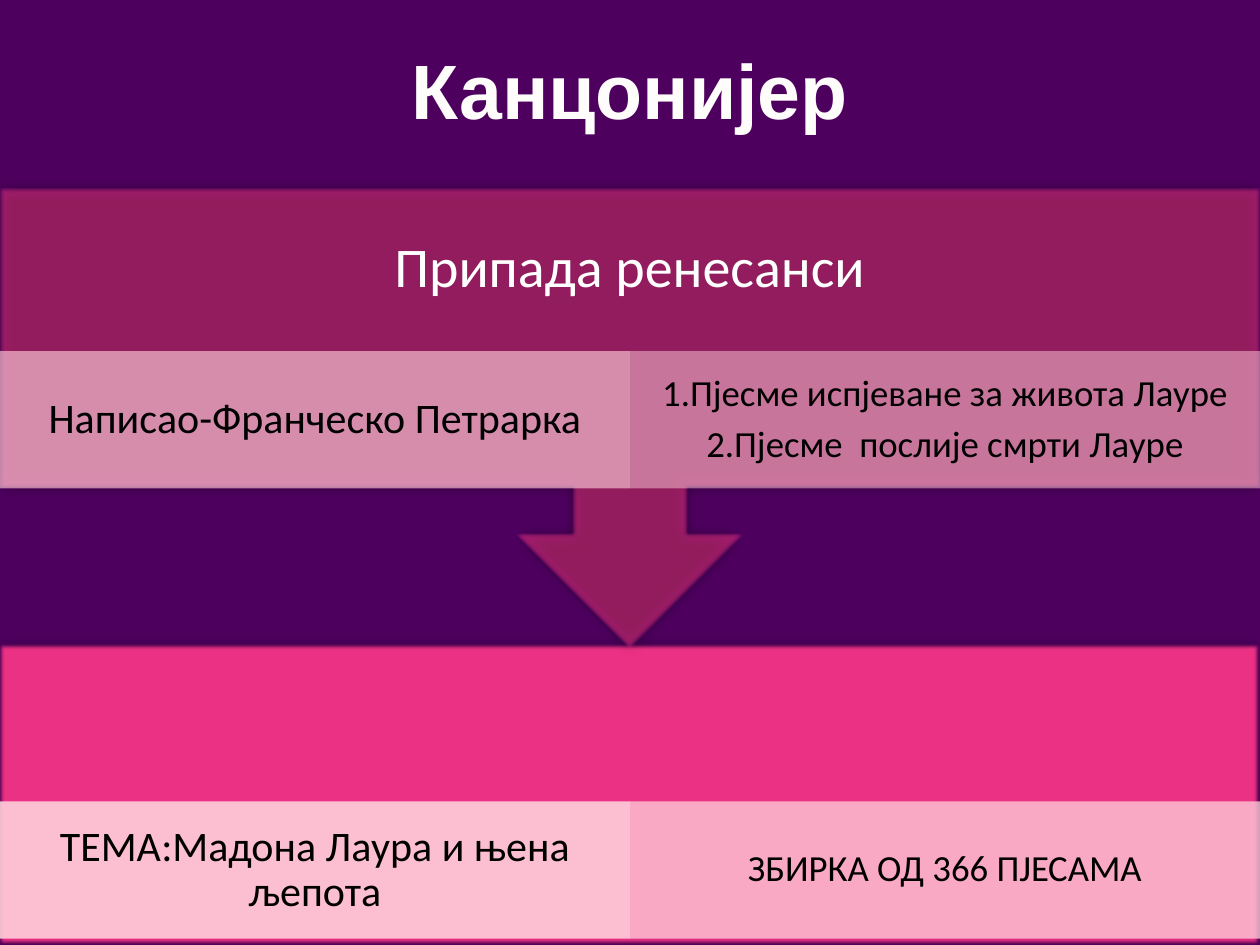
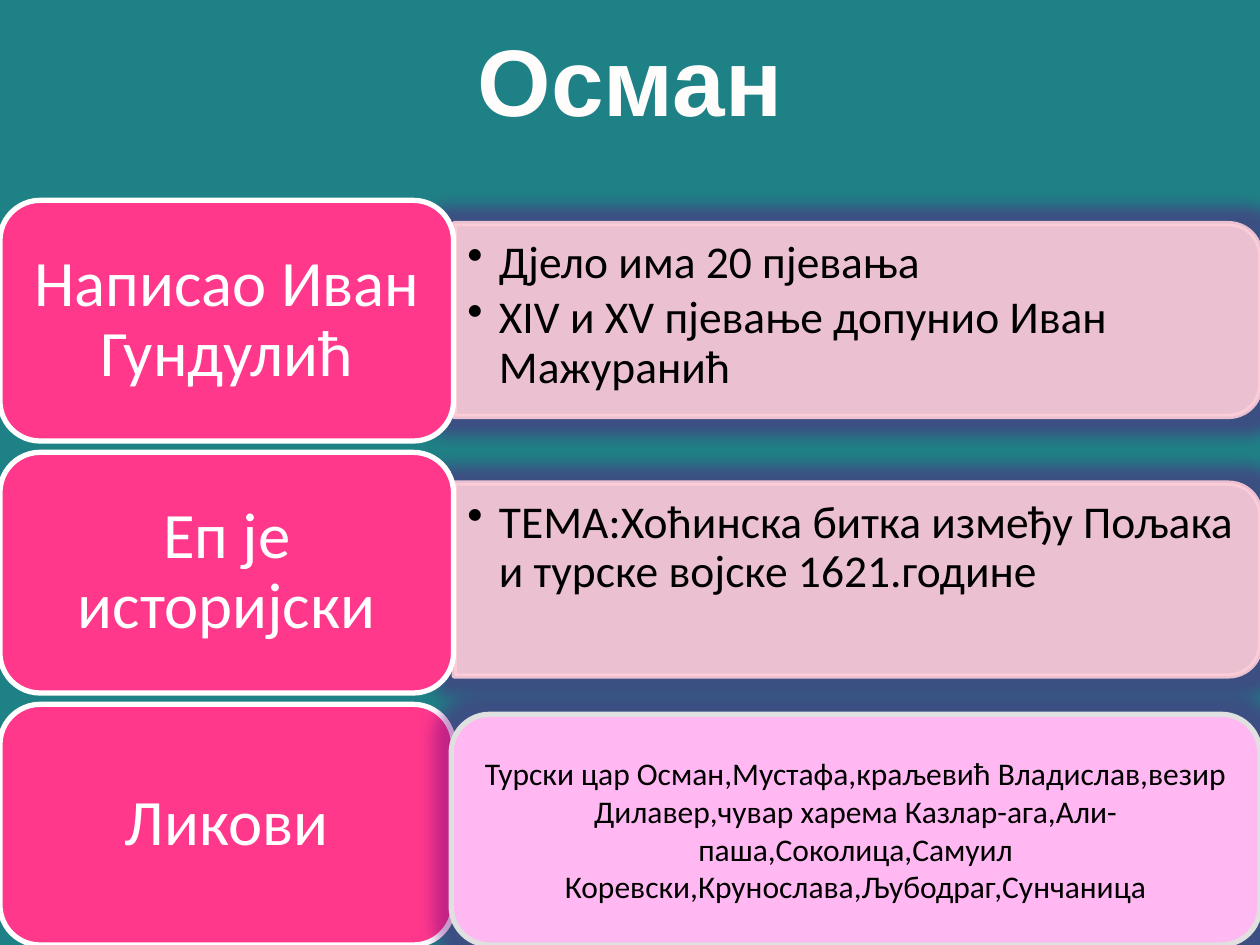
import pptx
import pptx.util
import pptx.dml.color
import pptx.enum.shapes
import pptx.enum.text
import pptx.oxml
import pptx.oxml.ns

Pt = pptx.util.Pt
Shape = pptx.enum.shapes.MSO_SHAPE
Align = pptx.enum.text.PP_ALIGN
Anchor = pptx.enum.text.MSO_ANCHOR
qn = pptx.oxml.ns.qn
NS = 'xmlns:a="http://schemas.openxmlformats.org/drawingml/2006/main"'

PINK, BLUSH, WHITE, BLACK, TITLE = "FF388C", "FFCEDA", "FFFFFF", "000000", "FFFCFC"
SOFT_SHADOW = (
    f'<a:effectLst {NS}><a:outerShdw blurRad="95250" dist="0" algn="ctr" rotWithShape="0">'
    f'<a:srgbClr val="{BLACK}"><a:alpha val="50000"/></a:srgbClr></a:outerShdw>'
    '<a:softEdge rad="12700"/></a:effectLst>')
PURPLE_GLOW = (
    f'<a:effectLst {NS}><a:glow rad="228600"><a:srgbClr val="69047E">'
    '<a:alpha val="40000"/></a:srgbClr></a:glow></a:effectLst>')
TITLE_OUTLINE = (
    f'<a:ln {NS} w="889"><a:solidFill><a:srgbClr val="{PINK}">'
    '<a:alpha val="55000"/></a:srgbClr></a:solidFill></a:ln>')
BULLET = f'<a:buChar {NS} char="•"/>'


def paint(fill, color, element=None, opacity=100):
    fill.solid()
    fill.fore_color.rgb = pptx.dml.color.RGBColor.from_string(color)
    if opacity < 100:
        rgb = element.find(qn("a:solidFill") + "/" + qn("a:srgbClr"))
        alpha = rgb.makeelement(qn("a:alpha"), {"val": str(opacity * 1000)})
        rgb.append(alpha)


def put(slide, text, box, kind=None, fill=None, opacity=100, line=None, effect=None,
        rotation=0, size=24, color=BLACK, font="Calibri", bold=False, outline=None,
        align=Align.CENTER, anchor=Anchor.MIDDLE, inset=(7.2, 3.6),
        spacing=0.9, after=0.31, bullet=False):
    place = [Pt(value) for value in box]
    if kind is None:
        item = slide.shapes.add_textbox(*place)
    else:
        item = slide.shapes.add_shape(kind, *place)
        item.rotation = rotation
        item.shadow.inherit = False
        properties = item.element.spPr
        paint(item.fill, fill, properties, opacity)
        if line:
            item.line.width = Pt(3)
            paint(item.line.fill, line, properties.find(qn("a:ln")), opacity)
        else:
            item.line.fill.background()
        if effect:
            properties.replace(properties.find(qn("a:effectLst")),
                               pptx.oxml.parse_xml(effect))
    if not text:
        return
    frame = item.text_frame
    frame.word_wrap = True
    frame.vertical_anchor = anchor
    frame.margin_left = frame.margin_right = Pt(inset[0])
    frame.margin_top = frame.margin_bottom = Pt(inset[1])
    for index, words in enumerate(text.split("\n")):
        paragraph = frame.add_paragraph() if index else frame.paragraphs[0]
        paragraph.alignment = align
        paragraph.line_spacing = spacing
        paragraph.space_after = Pt(round(size * after, 1))
        if bullet:
            settings = paragraph._p.get_or_add_pPr()
            settings.set("marL", str(Pt(18)))
            settings.set("indent", str(-Pt(18)))
            settings.append(pptx.oxml.parse_xml(BULLET))
        run = paragraph.add_run()
        run.text = words
        run.font.size = Pt(size)
        run.font.name = font
        run.font.bold = bold
        paint(run.font.fill, color)
        if outline:
            run._r.get_or_add_rPr().insert(0, pptx.oxml.parse_xml(outline))


deck = pptx.Presentation()
deck.slide_width, deck.slide_height = Pt(720), Pt(540)
slides = []
for heading, background, top, size in [
    ("Канцонијер", "4E005F", 18, 44),
    ("Осман", "1E8186", 12, 54),
]:
    slide = deck.slides.add_slide(deck.slide_layouts[6])
    paint(slide.background.fill, background)
    put(slide, heading, (36, top, 648, 66), size=size, color=TITLE, font="Arial",
        bold=True, outline=TITLE_OUTLINE, spacing=1, after=0)
    slides.append(slide)
canzoniere, osman = slides

put(canzoniere, "", (0, 368.6, 720, 171.4), kind=Shape.RECTANGLE, fill=PINK,
    opacity=90, effect=SOFT_SHADOW)
put(canzoniere, "", (0, 108, 720, 262.8), kind=Shape.UP_ARROW_CALLOUT, fill=PINK,
    opacity=50, effect=SOFT_SHADOW, rotation=180)
put(canzoniere, "Припада ренесанси", (0, 108, 720, 92.2), size=32, color=WHITE,
    inset=(18, 18))

facts = [
    (200.6, [("Написао-Франческо Петрарка", 63),
             ("1.Пјесме испјеване за живота Лауре\n2.Пјесме  послије смрти Лауре", 50)]),
    (457.9, [("ТЕМА:Мадона Лаура и њена љепота", 90), ("ЗБИРКА ОД 366 ПЈЕСАМА", 77)]),
]
for top, pair in facts:
    for column, (fact, opacity) in enumerate(pair):
        put(canzoniere, fact, (column * 360, top, 360, 78.5), kind=Shape.RECTANGLE,
            fill=BLUSH, opacity=opacity, size=(24, 21)[column],
            inset=((13.7, 11.5)[column], 2.2))

topics = [
    ("Написао Иван Гундулић",
     "Дјело има 20 пјевања\nXIV и XV пјевање допунио Иван Мажуранић"),
    ("Еп је историјски",
     "ТЕМА:Хоћинска битка између Пољака и турске војске 1621.године"),
    ("Ликови", ""),
]
for row, (topic, details) in enumerate(topics):
    if details:
        detail_top = 133.2 + row * 148.3
        put(osman, "", (434.9, detail_top - 180.7, 110.2, 460.8),
            kind=Shape.ROUND_2_SAME_RECTANGLE, fill=BLUSH, opacity=90, line=BLUSH,
            effect=PURPLE_GLOW, rotation=90)
        put(osman, details, (259.2, detail_top, 455.8, 99.4), size=26,
            align=Align.LEFT, anchor=Anchor.TOP, inset=(7.9, 3.6), after=0.14,
            bullet=True)
    put(osman, topic, (0, 114.5 + row * 144, 259.2, 137.5),
        kind=Shape.ROUNDED_RECTANGLE, fill=PINK, line=WHITE, size=37, color=WHITE,
        inset=(10.8, 5.8))

characters = ("Турски цар Осман,Мустафа,краљевић Владислав,везир Дилавер,чувар харема "
              "Казлар-ага,Али-паша,Соколица,Самуил Коревски,Крунослава,Љубодраг,Сунчаница")
put(osman, characters, (257.8, 408.2, 462.2, 131.8), kind=Shape.ROUNDED_RECTANGLE,
    fill="FFB8F2", line="E0E0E0", effect=PURPLE_GLOW, size=18, spacing=1, after=0)

deck.save("out.pptx")
